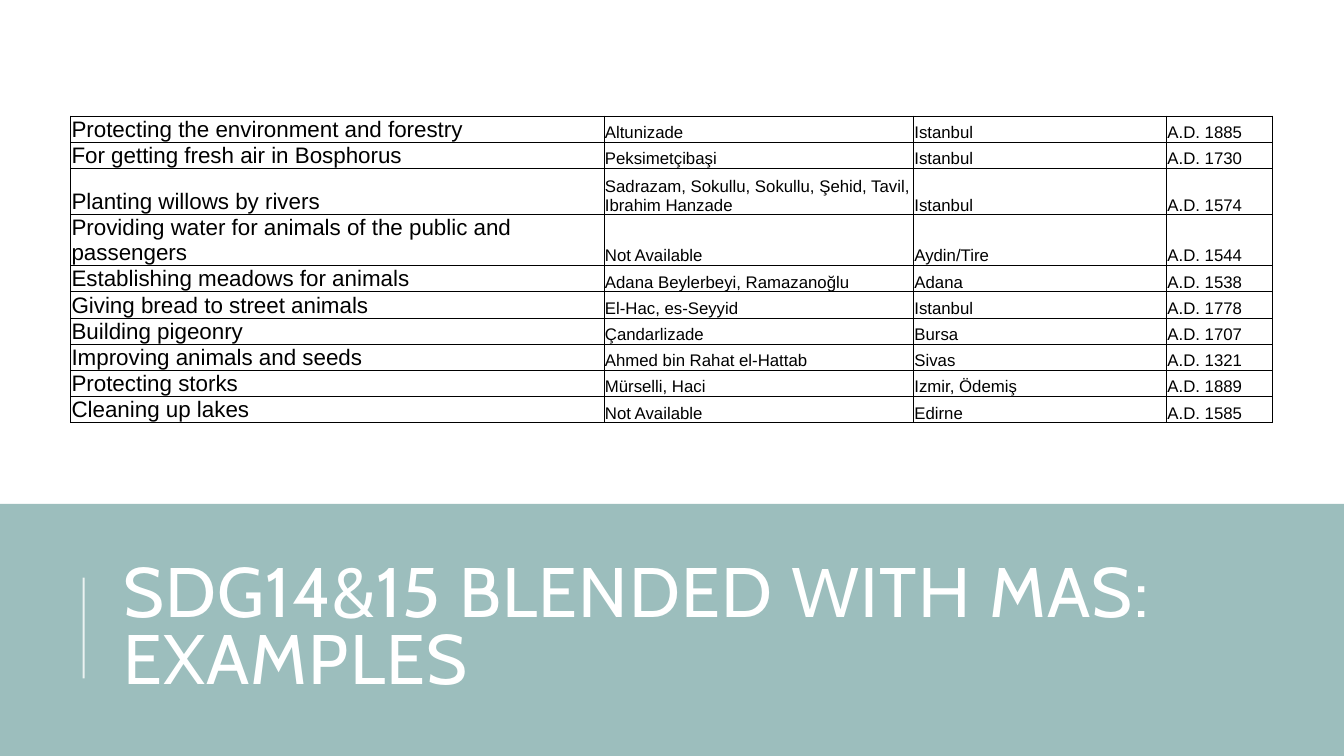
from lxml.etree import SubElement
from pptx import Presentation
from pptx.dml.color import RGBColor
from pptx.enum.shapes import MSO_CONNECTOR, MSO_SHAPE
from pptx.enum.text import MSO_ANCHOR, MSO_AUTO_SIZE, PP_ALIGN
from pptx.oxml.ns import qn
from pptx.util import Inches, Pt

TEAL = RGBColor(0x9C, 0xBE, 0xBD)
WHITE = RGBColor(0xFF, 0xFF, 0xFF)
BLACK = RGBColor(0, 0, 0)

W, H = 13.33, 7.5
BAND_TOP = H * 2 / 3
COLS = [5.29, 3.07, 2.51, 1.05]
ROW_H = 0.26
TALL_ROWS = {2: 0.46, 3: 0.5}  # rows whose text takes two lines

TITLE = "SDG14&15 BLENDED WITH MAS: EXAMPLES"
ROWS = [
    ("Protecting the environment and forestry", "Altunizade", "Istanbul", 1885),
    ("For getting fresh air in Bosphorus", "Peksimetçibaşi", "Istanbul", 1730),
    ("Planting willows by rivers",
     "Sadrazam, Sokullu, Sokullu, Şehid, Tavil, Ibrahim Hanzade", "Istanbul", 1574),
    ("Providing water for animals of the public and passengers",
     "Not Available", "Aydin/Tire", 1544),
    ("Establishing meadows for animals", "Adana Beylerbeyi, Ramazanoğlu", "Adana", 1538),
    ("Giving bread to street animals", "El-Hac, es-Seyyid", "Istanbul", 1778),
    ("Building pigeonry", "Çandarlizade", "Bursa", 1707),
    ("Improving animals and seeds", "Ahmed bin Rahat el-Hattab", "Sivas", 1321),
    ("Protecting storks", "Mürselli, Haci", "Izmir, Ödemiş", 1889),
    ("Cleaning up lakes", "Not Available", "Edirne", 1585),
]


def add_run(p, text, size, font, color):
    r = p.add_run()
    r.text = text
    r.font.size, r.font.name = Pt(size), font
    r.font.color.rgb = color
    return r


def add_border(cell):
    tc_pr = cell._tc.get_or_add_tcPr()
    for i, side in enumerate(("lnL", "lnR", "lnT", "lnB")):
        ln = tc_pr.makeelement(qn(f"a:{side}"), {"w": str(Pt(0.5))})
        fill = SubElement(ln, qn("a:solidFill"))
        SubElement(fill, qn("a:srgbClr"), val=str(BLACK))
        tc_pr.insert(i, ln)  # borders come before the fill


def add_title_band(s, x, y, w, h):
    # Band, sent behind the title
    band = s.shapes.add_shape(MSO_SHAPE.RECTANGLE, Inches(x), Inches(y),
                              Inches(w), Inches(h))
    band.shadow.inherit = False
    band.fill.solid()
    band.fill.fore_color.rgb = TEAL
    band.line.fill.background()
    s.shapes._spTree.insert(2, band._element)

    # Title
    title = s.shapes.title
    title.left, title.top = Inches(x + 1.12), Inches(y + 0.44)
    title.width, title.height = Inches(10.63), Inches(1.64)
    tf = title.text_frame
    tf.word_wrap, tf.auto_size = True, MSO_AUTO_SIZE.NONE
    tf.vertical_anchor = MSO_ANCHOR.MIDDLE
    p = tf.paragraphs[0]
    p.alignment, p.line_spacing = PP_ALIGN.LEFT, 0.8
    r = add_run(p, TITLE, 50, "Cabin", WHITE)
    r.font._element.set("spc", "100")

    # Thin accent line left of the title
    rule_x = Inches(x + 0.83)
    rule = s.shapes.add_connector(MSO_CONNECTOR.STRAIGHT, rule_x, Inches(y + 1.73),
                                  rule_x, Inches(y + 0.73))
    rule.line.color.rgb, rule.line.width = WHITE, Pt(1.5)
    color = rule._element.spPr.find(".//" + qn("a:srgbClr"))
    SubElement(color, qn("a:alpha"), val="80000")
    SubElement(rule._element.spPr, qn("a:effectLst"))


def add_examples_table(s, x, y):
    heights = [TALL_ROWS.get(i, ROW_H) for i in range(len(ROWS))]
    table = s.shapes.add_table(len(ROWS), len(COLS), Inches(x), Inches(y),
                               Inches(sum(COLS)), Inches(sum(heights))).table
    table.first_row = table.horz_banding = False
    for col, width in zip(table.columns, COLS):
        col.width = Inches(width)
    for row, height, (purpose, founder, place, year) in zip(table.rows, heights, ROWS):
        row.height = Inches(height)
        texts = (purpose, founder, place, f"A.D. {year}")
        for i, (cell, text) in enumerate(zip(row.cells, texts)):
            cell.margin_left = cell.margin_right = cell.margin_top = Inches(0.01)
            cell.margin_bottom = 0
            cell.vertical_anchor = MSO_ANCHOR.BOTTOM
            cell.fill.background()
            add_border(cell)
            add_run(cell.text_frame.paragraphs[0], text, 12 if i else 16,
                    "Arial", BLACK)


def main():
    prs = Presentation()
    prs.slide_width, prs.slide_height = Inches(W), Inches(H)
    s = prs.slides.add_slide(prs.slide_layouts[5])
    s.background.fill.solid()
    s.background.fill.fore_color.rgb = WHITE
    add_title_band(s, 0, BAND_TOP, W, H - BAND_TOP)
    add_examples_table(s, 0.7, 1.15)
    prs.save("out.pptx")


if __name__ == "__main__":
    main()
